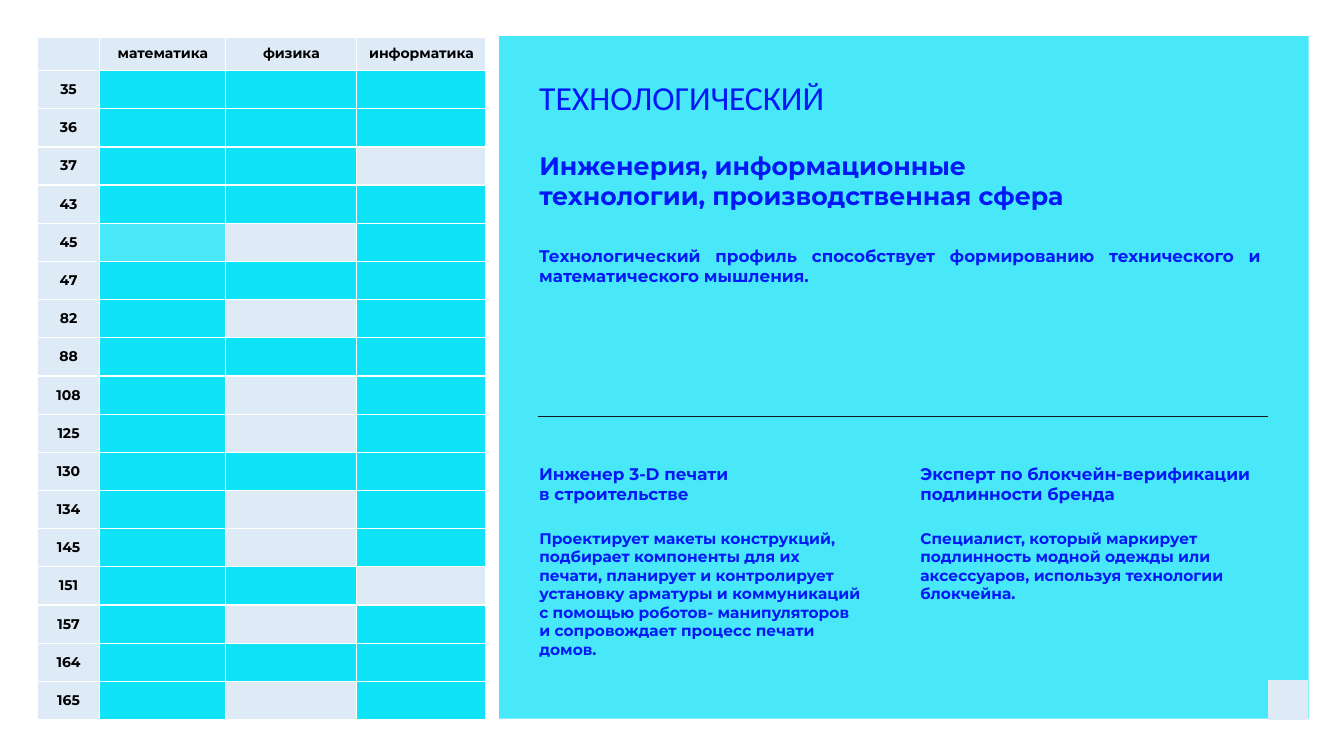
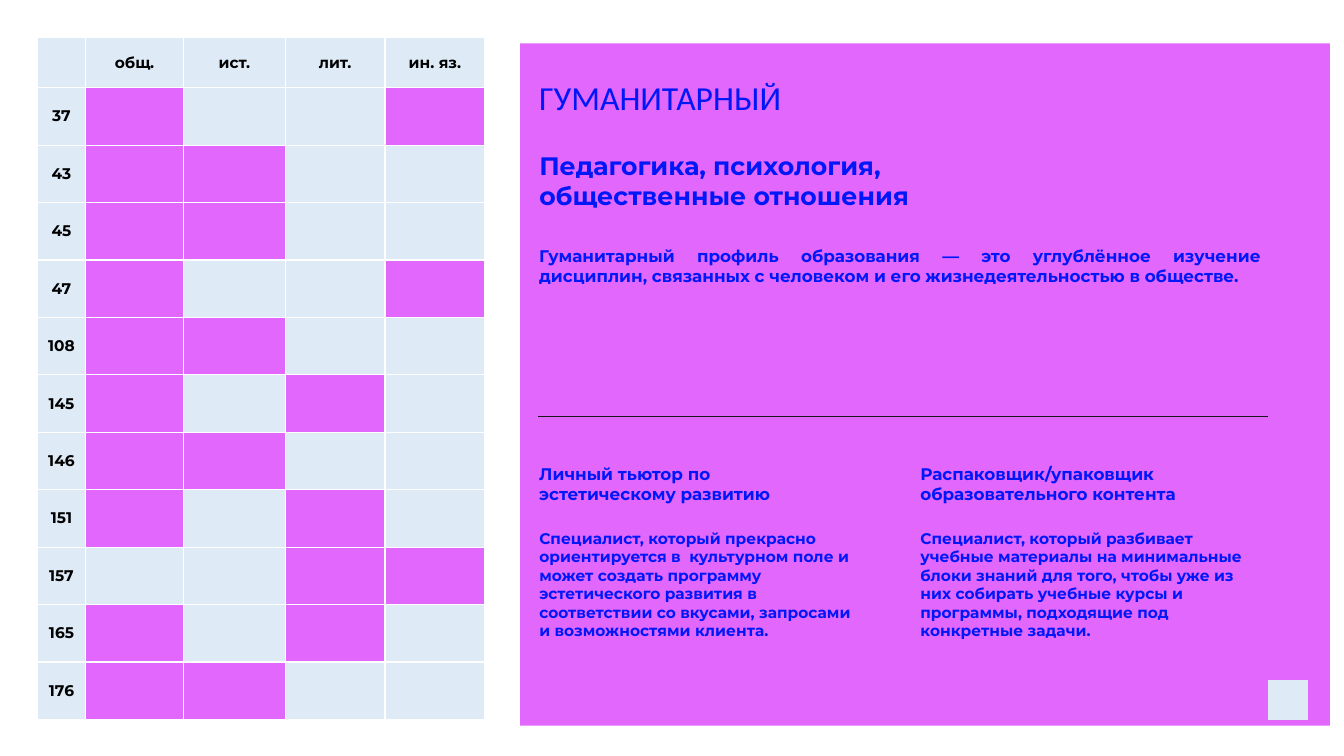
from itertools import product

from lxml import etree
from pptx import Presentation
from pptx.dml.color import RGBColor
from pptx.enum import shapes, text
from pptx.oxml import ns
from pptx.util import Inches, Pt

COLOURS = {
    "white": "FFFFFF",
    "black": "000000",
    "rule": "181717",
    "pale": "DEEBF7",
    "ink": "0017F8",
    "cyan": "49E8F9",
    "bright_cyan": "0FE3F7",
    "violet": "E267FD",
}
BODY_FONT = "Montserrat"
TITLE_FONT = "Calibri"
TABLE_BOX = (0.37, 0.37, 4.45, 6.77)
PANEL_SIZE = (8.03, 6.77)
CONTENT_ORIGIN = (5.25, 0.71)
CONTENT_WIDTH = 7.36
PROFESSION_COLUMNS = ((0, 3.64, 3.41), (3.78, 3.58, 3.58))


def colour(name):
    return RGBColor.from_string(COLOURS[name])


def add_run(paragraph, words, size, ink="ink", font=BODY_FONT, bold=True):
    run = paragraph.add_run()
    run.text = words
    run.font.size = Pt(size)
    run.font.name = font
    run.font.bold = bold
    run.font.color.rgb = colour(ink)


def add_text(slide, box, words, size, align=text.PP_ALIGN.LEFT, **style):
    shape = slide.shapes.add_textbox(*map(Inches, box))
    frame = shape.text_frame
    frame.word_wrap = True
    frame.auto_size = text.MSO_AUTO_SIZE.SHAPE_TO_FIT_TEXT
    paragraph = frame.paragraphs[0]
    paragraph.alignment = align
    for index, line in enumerate(words.split("\n")):
        if index:
            paragraph.add_line_break()
        add_run(paragraph, line, size, **style)


def add_block(slide, preset, box, fill):
    shape = slide.shapes.add_shape(preset, *map(Inches, box))
    shape.shadow.inherit = False
    shape.fill.solid()
    shape.fill.fore_color.rgb = colour(fill)
    shape.line.fill.background()
    return shape


def add_rule(slide, left, top, width):
    ends = map(Inches, (left, top, left + width, top))
    rule = slide.shapes.add_connector(shapes.MSO_CONNECTOR.STRAIGHT, *ends)
    rule.line.color.rgb = colour("rule")
    rule.line.width = Pt(1)
    etree.SubElement(rule._element.spPr, ns.qn("a:effectLst"))


def style_cell(cell, fill):
    cell.margin_top = cell.margin_bottom = 0
    cell.margin_left = cell.margin_right = Inches(0.05)
    cell.vertical_anchor = text.MSO_ANCHOR.MIDDLE
    cell.fill.solid()
    cell.fill.fore_color.rgb = colour(fill)
    properties = cell._tc.get_or_add_tcPr()
    for index, side in enumerate(("lnL", "lnR", "lnT", "lnB")):
        border = etree.Element(ns.qn(f"a:{side}"), w=str(Pt(1)))
        solid = etree.SubElement(border, ns.qn("a:solidFill"))
        etree.SubElement(solid, ns.qn("a:srgbClr"), val=COLOURS["white"])
        properties.insert(index, border)


def add_school_table(slide, box, subjects, schools, widths, header_height, size, fills):
    rows, columns = len(schools) + 1, len(subjects) + 1
    table = slide.shapes.add_table(rows, columns, *map(Inches, box)).table
    table.first_row = table.horz_banding = False
    for column, width in zip(table.columns, widths):
        column.width = Inches(width)
    for row in table.rows:
        row.height = Inches((box[3] - header_height) / len(schools))
    table.rows[0].height = Inches(header_height)

    labels = {(0, index): name for index, name in enumerate(subjects, 1)}
    labels.update({(index, 0): school for index, (school, _) in enumerate(schools, 1)})
    marks = ["." * columns] + ["." + pattern for _, pattern in schools]
    for row, column in product(range(rows), range(columns)):
        cell = table.cell(row, column)
        style_cell(cell, fills[marks[row][column]])
        if (row, column) in labels:
            paragraph = cell.text_frame.paragraphs[0]
            paragraph.alignment = text.PP_ALIGN.CENTER
            add_run(paragraph, labels[row, column], size, "black")


def add_profile(slide, origin, title, field, summary, professions):
    left, top = origin
    add_text(slide, (left, top, CONTENT_WIDTH, 0.5), title, 24, font=TITLE_FONT, bold=False)
    add_text(slide, (left, top + 0.73, 5.69, 0.71), field, 18)
    add_text(slide, (left, top + 1.68, CONTENT_WIDTH, 0.5), summary, 12,
             align=text.PP_ALIGN.JUSTIFY)
    add_rule(slide, left + 0.09, top + 3.42, 7.24)
    for (offset, name_width, duty_width), (name, duty) in zip(PROFESSION_COLUMNS, professions):
        add_text(slide, (left + offset, top + 3.84, name_width, 0.5), name, 12)
        add_text(slide, (left + offset, top + 4.49, duty_width, 1.4), duty, 11)
    add_block(slide, shapes.MSO_SHAPE.ACTION_BUTTON_CUSTOM,
              (left + 7.33, top + 6.04, 0.39, 0.39), "pale")


def add_profile_slide(presentation, panel_origin, panel_fill, table, profile):
    slide = presentation.slides.add_slide(presentation.slide_layouts[6])
    panel = add_block(slide, shapes.MSO_SHAPE.ROUNDED_RECTANGLE,
                      panel_origin + PANEL_SIZE, panel_fill)
    panel.adjustments[0] = 0
    add_school_table(slide, TABLE_BOX, **table)
    add_profile(slide, CONTENT_ORIGIN, **profile)


TECHNOLOGY_TABLE = {
    "subjects": ("математика", "физика", "информатика"),
    "schools": (
        ("35", "###"), ("36", "###"), ("37", "##."), ("43", "###"), ("45", "+.#"),
        ("47", "###"), ("82", "#.#"), ("88", "###"), ("108", "#.#"), ("125", "#.#"),
        ("130", "###"), ("134", "#.#"), ("145", "#.#"), ("151", "##."), ("157", "#.#"),
        ("164", "###"), ("165", "#.#"),
    ),
    "widths": (0.62, 1.25, 1.3, 1.28),
    "header_height": 0.33,
    "size": 10,
    "fills": {"#": "bright_cyan", "+": "cyan", ".": "pale"},
}
TECHNOLOGY_PROFILE = {
    "title": "ТЕХНОЛОГИЧЕСКИЙ",
    "field": "Инженерия, информационные технологии, производственная сфера",
    "summary": "Технологический профиль способствует формированию технического "
               "и математического мышления.",
    "professions": (
        ("Инженер 3-D печати\nв строительстве",
         "Проектирует макеты конструкций, подбирает компоненты для их печати, "
         "планирует и контролирует установку арматуры и коммуникаций "
         "с помощью роботов- манипуляторов и сопровождает процесс печати домов."),
        ("Эксперт по блокчейн-верификации\nподлинности бренда",
         "Специалист, который маркирует подлинность модной одежды или "
         "аксессуаров, используя технологии блокчейна."),
    ),
}
HUMANITIES_TABLE = {
    "subjects": ("общ.", "ист.", "лит.", "ин. яз."),
    "schools": (
        ("37", "#..#"), ("43", "##.."), ("45", "##.."), ("47", "#..#"),
        ("108", "##.."), ("145", "#.#."), ("146", "##.."), ("151", "#.#."),
        ("157", "..##"), ("165", "#.#."), ("176", "##.."),
    ),
    "widths": (0.48, 0.97, 1.01, 0.99, 0.99),
    "header_height": 0.5,
    "size": 11,
    "fills": {"#": "violet", ".": "pale"},
}
HUMANITIES_PROFILE = {
    "title": "ГУМАНИТАРНЫЙ",
    "field": "Педагогика, психология,\nобщественные отношения",
    "summary": "Гуманитарный профиль образования — это углублённое изучение "
               "дисциплин, связанных с человеком и его жизнедеятельностью в обществе.",
    "professions": (
        ("Личный тьютор по\nэстетическому развитию",
         "Специалист, который прекрасно ориентируется в  культурном поле и  может "
         "создать программу эстетического развития в  соответствии "
         "со вкусами, запросами и возможностями клиента."),
        ("Распаковщик/упаковщик образовательного контента",
         "Специалист, который разбивает учебные материалы на минимальные блоки "
         "знаний для того, чтобы уже из  них собирать учебные курсы "
         "и программы, подходящие под конкретные задачи."),
    ),
}


def main():
    presentation = Presentation()
    presentation.slide_width = Inches(13.33)
    presentation.slide_height = Inches(7.5)
    add_profile_slide(presentation, (4.95, 0.36), "cyan", TECHNOLOGY_TABLE, TECHNOLOGY_PROFILE)
    add_profile_slide(presentation, (5.16, 0.43), "violet", HUMANITIES_TABLE, HUMANITIES_PROFILE)
    presentation.save("out.pptx")


if __name__ == "__main__":
    main()
